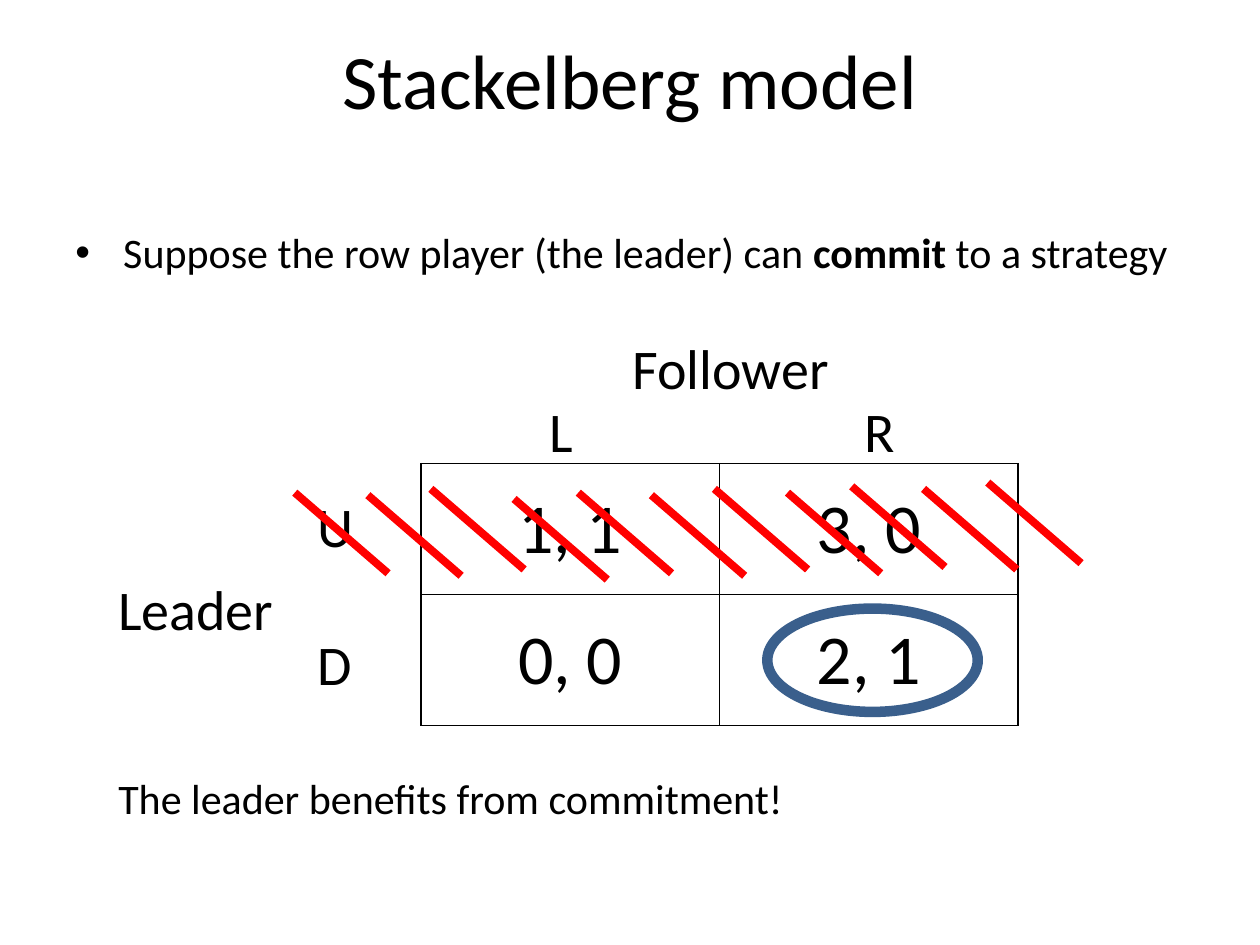
from lxml.etree import SubElement
from pptx import Presentation
from pptx.dml.color import RGBColor
from pptx.enum.shapes import MSO_CONNECTOR, MSO_SHAPE
from pptx.enum.text import MSO_ANCHOR, PP_ALIGN
from pptx.oxml.ns import qn
from pptx.util import Inches, Pt

FONT = "Calibri"
BLACK, RED, BLUE = "000000", "FF0000", "3A5F8C"

TITLE = "Stackelberg model"
BULLET = [("Suppose the row player (the leader) can ", False), ("commit", True), (" to a strategy", False)]
PAYOFFS = [["1, 1", "3, 0"], ["0, 0", "2, 1"]]
LABELS = [
    ("Leader", 0.84, 4.51, 2, 0.64, 32),
    ("Follower", 4.92, 2.6, 2, 0.64, 32),
    ("U", 2.42, 3.85, 0.83, 0.64, 32),
    ("D", 2.42, 4.95, 0.83, 0.64, 32),
    ("L", 4.26, 3.1, 0.83, 0.64, 32),
    ("R", 6.76, 3.1, 0.83, 0.64, 32),
    ("The leader benefits from commitment!", 0.84, 6.08, 8.41, 0.5, 24),
]
STRIKE_STARTS = [
    (7.84, 3.83), (7.33, 3.88), (6.76, 3.86), (6.25, 3.91), (5.67, 3.88), (5.17, 3.93),
    (4.59, 3.91), (4.08, 3.96), (3.42, 3.88), (2.92, 3.93), (2.34, 3.91),
]
STRIKE_WIDTH, STRIKE_HEIGHT = 0.74, 0.64
TABLE_LEFT, TABLE_TOP = 3.34, 3.68
COLUMN_WIDTH, ROW_HEIGHT = 2.37, 1.04


def color(value):
    return RGBColor.from_string(value)


def add_span(para, text, size, bold=False):
    span = para.add_run()
    span.text = text
    span.font.name = FONT
    span.font.size = Pt(size)
    span.font.bold = bold
    span.font.color.rgb = color(BLACK)


def add_box(page, left, top, width, height, spans, size, align=PP_ALIGN.LEFT, anchor=MSO_ANCHOR.TOP):
    box = page.shapes.add_textbox(Inches(left), Inches(top), Inches(width), Inches(height))
    box.text_frame.word_wrap = True
    box.text_frame.vertical_anchor = anchor
    para = box.text_frame.paragraphs[0]
    para.alignment = align
    for text, bold in spans:
        add_span(para, text, size, bold)
    return para


def add_bullet(para, size):
    para.space_before = Pt(0.2 * size)
    properties = para._p.get_or_add_pPr()
    properties.set("marL", str(Inches(0.38)))
    properties.set("indent", str(Inches(-0.38)))
    SubElement(properties, qn("a:buFont"), typeface="Arial")
    SubElement(properties, qn("a:buChar"), char="•")


def add_borders(cell):
    properties = cell._tc.get_or_add_tcPr()
    for side in ("a:lnL", "a:lnR", "a:lnT", "a:lnB"):
        border = SubElement(properties, qn(side), w=str(Pt(1)))
        fill = SubElement(border, qn("a:solidFill"))
        SubElement(fill, qn("a:srgbClr"), val=BLACK)


def add_payoffs(page):
    rows, columns = len(PAYOFFS), len(PAYOFFS[0])
    table = page.shapes.add_table(
        rows, columns, Inches(TABLE_LEFT), Inches(TABLE_TOP),
        Inches(columns * COLUMN_WIDTH), Inches(rows * ROW_HEIGHT),
    ).table
    table.first_row = False
    table.horz_banding = False
    for column in table.columns:
        column.width = Inches(COLUMN_WIDTH)
    for row, values in enumerate(PAYOFFS):
        table.rows[row].height = Inches(ROW_HEIGHT)
        for column, value in enumerate(values):
            cell = table.cell(row, column)
            add_borders(cell)
            cell.fill.background()
            cell.vertical_anchor = MSO_ANCHOR.MIDDLE
            para = cell.text_frame.paragraphs[0]
            para.alignment = PP_ALIGN.CENTER
            add_span(para, value, 40)


def add_strikes(page):
    group = page.shapes.add_group_shape()
    for left, top in STRIKE_STARTS:
        strike = group.shapes.add_connector(
            MSO_CONNECTOR.STRAIGHT, Inches(left + STRIKE_WIDTH), Inches(top + STRIKE_HEIGHT),
            Inches(left), Inches(top),
        )
        strike.line.color.rgb = color(RED)
        strike.line.width = Pt(4.5)
        SubElement(strike._element.spPr, qn("a:effectLst"))


def add_outcome_ring(page):
    ring = page.shapes.add_shape(MSO_SHAPE.OVAL, Inches(6.09), Inches(4.83), Inches(1.67), Inches(0.82))
    ring.shadow.inherit = False
    ring.fill.background()
    ring.line.color.rgb = color(BLUE)
    ring.line.width = Pt(6)


def main():
    deck = Presentation()
    deck.slide_width, deck.slide_height = Inches(10), Inches(7.5)
    page = deck.slides.add_slide(deck.slide_layouts[6])
    add_box(page, 0.5, 0, 9, 1.25, [(TITLE, False)], 44, PP_ALIGN.CENTER, MSO_ANCHOR.MIDDLE)
    add_bullet(add_box(page, 0.5, 1.75, 9, 1.35, BULLET, 24), 24)
    add_payoffs(page)
    for text, left, top, width, height, size in LABELS:
        add_box(page, left, top, width, height, [(text, False)], size)
    add_strikes(page)
    add_outcome_ring(page)
    deck.save("out.pptx")


if __name__ == "__main__":
    main()
